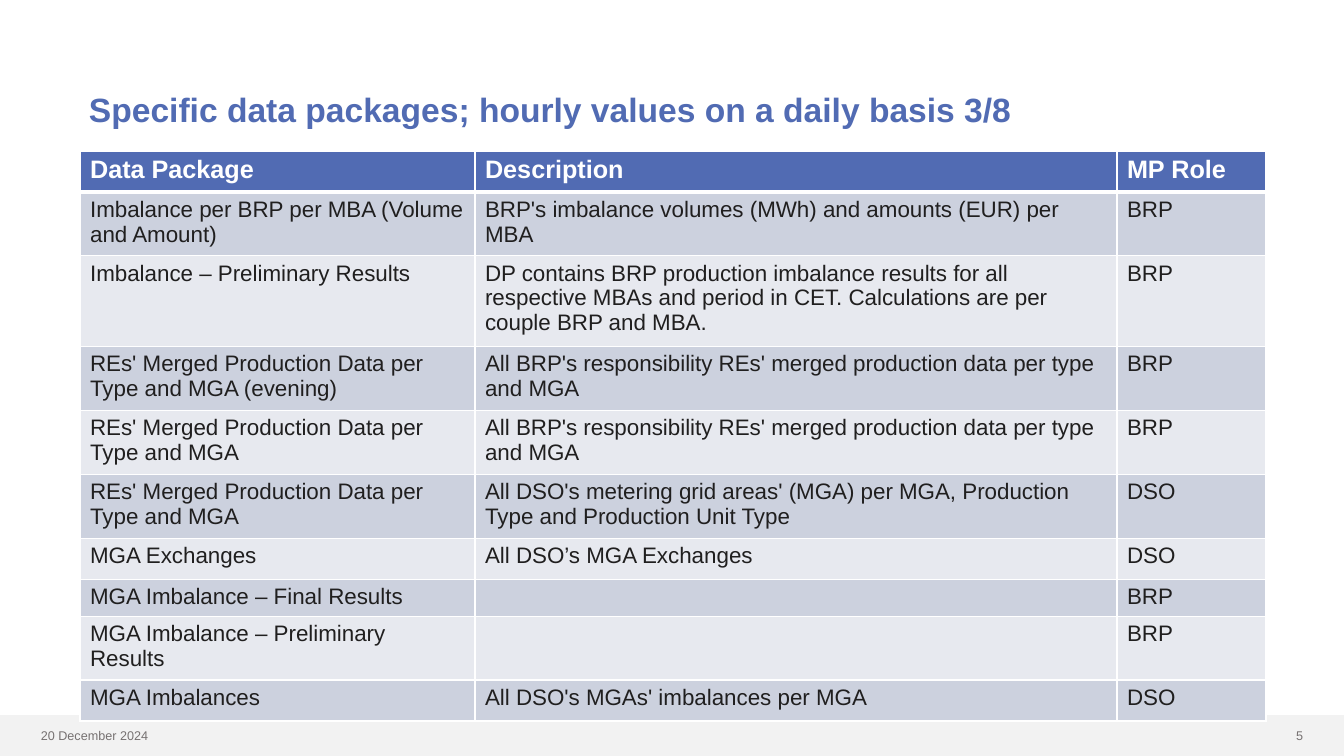
from lxml.etree import SubElement
from pptx import Presentation
from pptx.dml.color import RGBColor
from pptx.enum.shapes import MSO_SHAPE as Preset
from pptx.enum.text import MSO_ANCHOR as Anchor, PP_ALIGN as Align
from pptx.oxml.ns import qn
from pptx.util import Pt

TITLE = "Specific data packages; hourly values on a daily basis 3/8"
DATE = "20 December 2024"
PAGE = "5"
HEADINGS = ("Data Package", "Description", "MP Role")
PACKAGES = [
    ("Imbalance per BRP per MBA (Volume and Amount)",
     "BRP's imbalance volumes (MWh) and amounts (EUR) per MBA", "BRP"),
    ("Imbalance – Preliminary Results",
     "DP contains BRP production imbalance results for all respective MBAs "
     "and period in CET. Calculations are per couple BRP and MBA.", "BRP"),
    ("REs' Merged Production Data per Type and MGA (evening)",
     "All BRP's responsibility REs' merged production data per type and MGA", "BRP"),
    ("REs' Merged Production Data per Type and MGA",
     "All BRP's responsibility REs' merged production data per type and MGA", "BRP"),
    ("REs' Merged Production Data per Type and MGA",
     "All DSO's metering grid areas' (MGA) per MGA, Production Type and "
     "Production Unit Type", "DSO"),
    ("MGA Exchanges", "All DSO’s MGA Exchanges", "DSO"),
    ("MGA Imbalance – Final Results", "", "BRP"),
    ("MGA Imbalance – Preliminary Results", "", "BRP"),
    ("MGA Imbalances", "All DSO's MGAs' imbalances per MGA", "DSO"),
]

FONT = "Arial"
BLUE = RGBColor(0x51, 0x6B, 0xB3)
WHITE = RGBColor(0xFF, 0xFF, 0xFF)
INK = RGBColor(0x20, 0x1F, 0x1F)
GREY = RGBColor(0x76, 0x71, 0x71)
FOOTER_FILL = RGBColor(0xF2, 0xF2, 0xF2)
BANDS = (RGBColor(0xCC, 0xD1, 0xDE), RGBColor(0xE7, 0xE9, 0xEF))

PX = 914400 / 100.8
SLIDE_W, SLIDE_H = 1344, 756
FOOTER_TOP = 715
COLUMN_WIDTHS = (395, 642, 149)
ROW_HEIGHT, SHORT_ROW_HEIGHT, SHORT_ROW = 41, 32, 7
TABLE_LEFT, TABLE_TOP = 80, 151


def px(*lengths):
    return [round(length * PX) for length in lengths]


def write(paragraph, text, size, color, bold=False):
    run = paragraph.add_run()
    run.text = text
    run.font.name = FONT
    run.font.size = Pt(size)
    run.font.bold = bold
    run.font.color.rgb = color


def add_text(slide, box, text, size, color, bold=False, align=Align.LEFT, spacing=1.0):
    frame = slide.shapes.add_textbox(*px(*box)).text_frame
    frame.word_wrap = True
    frame.vertical_anchor = Anchor.MIDDLE
    paragraph = frame.paragraphs[0]
    paragraph.alignment = align
    paragraph.line_spacing = spacing
    write(paragraph, text, size, color, bold)


def set_borders(cell, widths):
    properties = cell._tc.get_or_add_tcPr()
    for position, (side, width) in enumerate(widths.items()):
        line = properties.makeelement(qn(f"a:{side}"), {"w": str(Pt(width))})
        fill = SubElement(line, qn("a:solidFill"))
        SubElement(fill, qn("a:srgbClr"), val=str(WHITE))
        properties.insert(position, line)


def fill_cell(cell, text, row):
    header = row == 0
    size = 18 if header else 16
    cell.fill.solid()
    cell.fill.fore_color.rgb = BLUE if header else BANDS[(row - 1) % 2]
    set_borders(cell, {"lnL": 1, "lnR": 1, "lnT": 3 if row == 1 else 1,
                       "lnB": 3 if header else 1})
    paragraph = cell.text_frame.paragraphs[0]
    if text:
        write(paragraph, text, size, WHITE if header else INK, header)
    else:
        SubElement(paragraph._p, qn("a:endParaRPr"), sz=str(size * 100))


def add_package_table(slide):
    rows = [HEADINGS, *PACKAGES]
    heights = [SHORT_ROW_HEIGHT if row == SHORT_ROW else ROW_HEIGHT
               for row in range(len(rows))]
    table = slide.shapes.add_table(
        len(rows), len(HEADINGS),
        *px(TABLE_LEFT, TABLE_TOP, sum(COLUMN_WIDTHS), sum(heights))).table
    for column, width in zip(table.columns, px(*COLUMN_WIDTHS)):
        column.width = width
    for row, height in enumerate(px(*heights)):
        table.rows[row].height = height
        for column, text in enumerate(rows[row]):
            fill_cell(table.cell(row, column), text, row)


def main():
    deck = Presentation()
    deck.slide_width, deck.slide_height = px(SLIDE_W, SLIDE_H)
    slide = deck.slides.add_slide(deck.slide_layouts[6])

    footer = slide.shapes.add_shape(
        Preset.RECTANGLE, *px(0, FOOTER_TOP, SLIDE_W, SLIDE_H - FOOTER_TOP))
    footer.shadow.inherit = False
    footer.fill.solid()
    footer.fill.fore_color.rgb = FOOTER_FILL
    footer.line.fill.background()

    add_text(slide, (1231, 723, 82, 25), PAGE, 9, GREY, align=Align.RIGHT)
    add_text(slide, (31, 723, 214, 25), DATE, 9, GREY)
    add_text(slide, (79, 39, 1182, 146), TITLE, 24, BLUE, bold=True, spacing=0.9)
    add_package_table(slide)
    deck.save("out.pptx")


if __name__ == "__main__":
    main()
